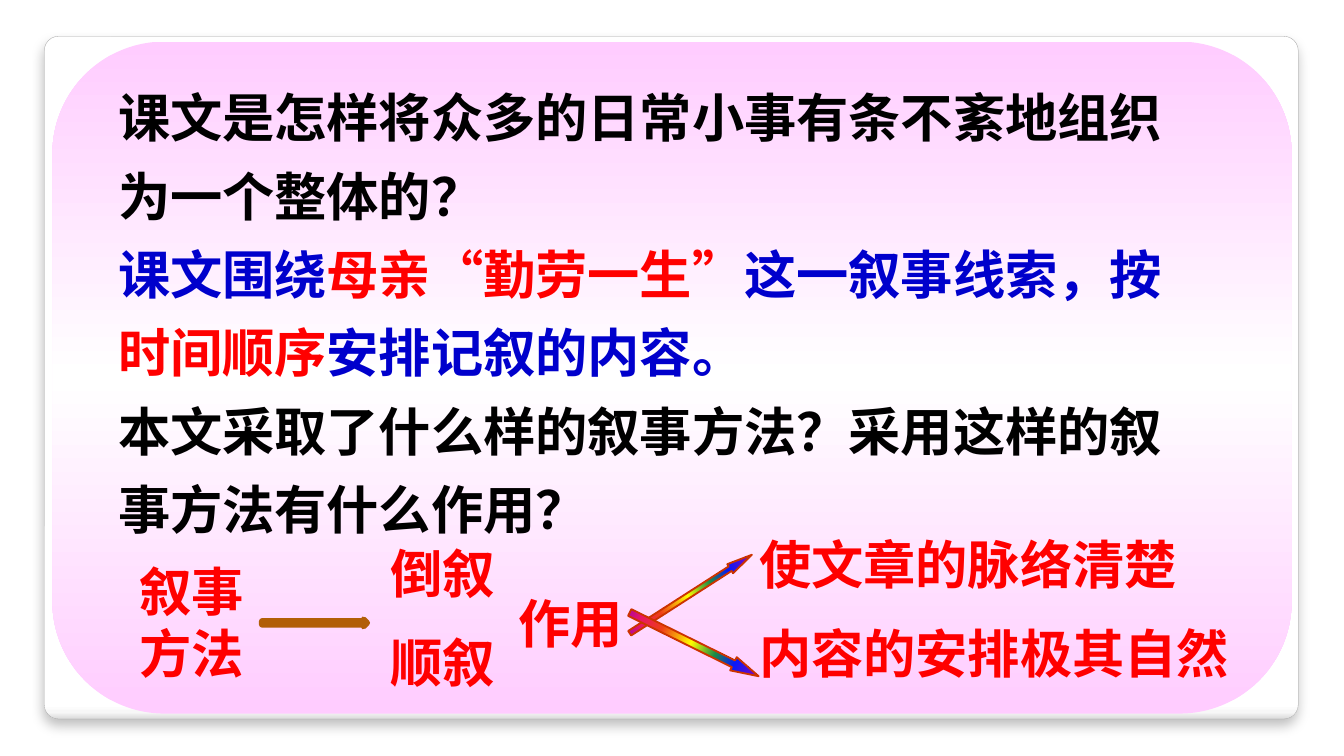
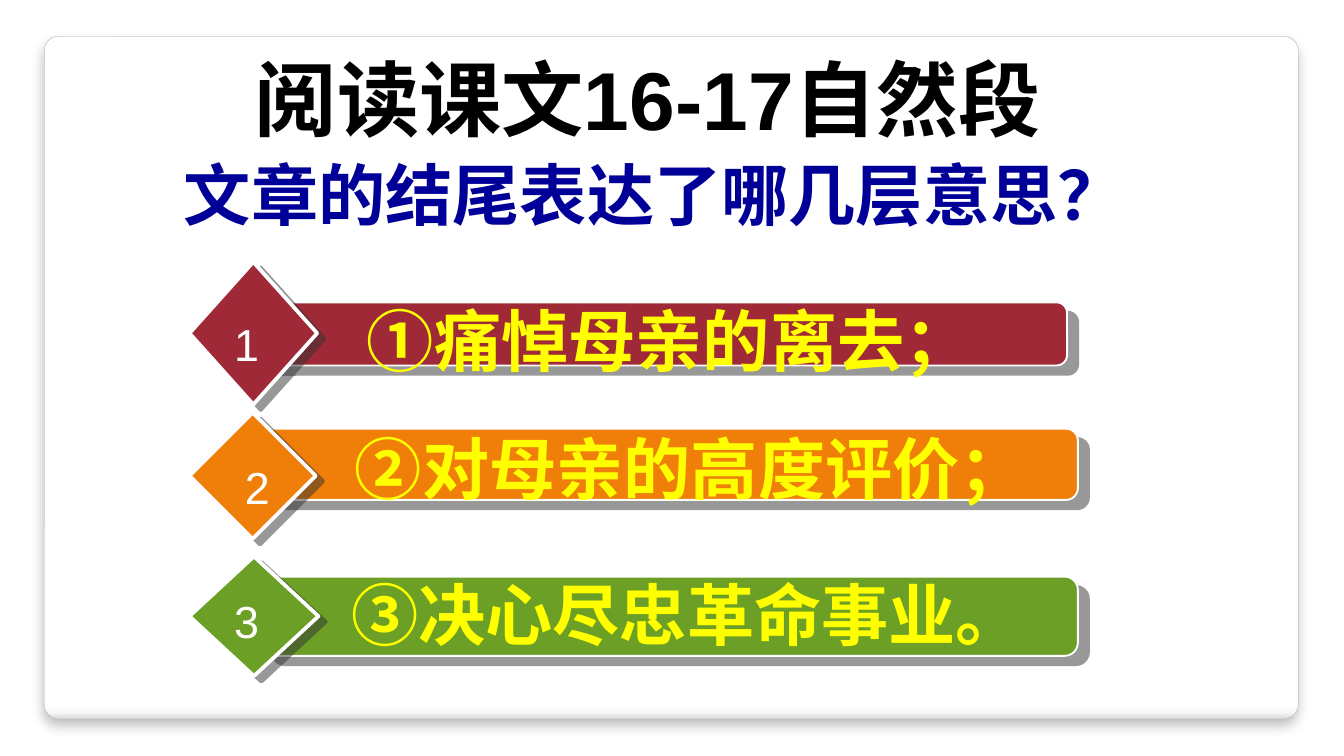
from lxml.etree import SubElement
from pptx import Presentation
from pptx.dml.color import RGBColor
from pptx.enum.shapes import MSO_SHAPE
from pptx.enum.text import MSO_AUTO_SIZE, PP_ALIGN
from pptx.oxml.ns import qn
from pptx.util import Inches, Pt

SLIDE_W, SLIDE_H = Inches(10), Inches(5.625)
COL, ROW = SLIDE_W / 100, SLIDE_H / 56.25

CJK, LATIN = "Noto Sans CJK SC", "Arial"

BLACK = RGBColor(0x00, 0x00, 0x00)
WHITE = RGBColor(0xFF, 0xFF, 0xFF)
PINK = RGBColor(0xFF, 0xCC, 0xFF)
RED = RGBColor(0xFF, 0x00, 0x00)
BLUE = RGBColor(0x00, 0x00, 0xCC)
NAVY = RGBColor(0x00, 0x00, 0x99)
YELLOW = RGBColor(0xFF, 0xFF, 0x00)
CRIMSON = RGBColor(0x9F, 0x29, 0x36)
ORANGE = RGBColor(0xF0, 0x7F, 0x09)
BROWN = RGBColor(0xB2, 0x5E, 0x07)
GREEN = RGBColor(0x6B, 0x9F, 0x25)
RUST = RGBColor(0xCC, 0x33, 0x00)
EDGE = RGBColor(0xA4, 0xA4, 0xA4)
SMOKE = RGBColor(0x33, 0x33, 0x33)
SILVER = RGBColor(0xC0, 0xC0, 0xC0)
MIST = RGBColor(0xF7, 0xF7, 0xF7)
FOG = RGBColor(0xDA, 0xDA, 0xDA)
PURPLE = RGBColor(0xA6, 0x03, 0xAB)
MAGENTA = RGBColor(0xE8, 0x17, 0x66)
FLAME = RGBColor(0xEE, 0x3F, 0x17)
EMERALD = RGBColor(0x1A, 0x8D, 0x48)
COBALT = RGBColor(0x08, 0x19, 0xFB)

PANEL_STOPS = [(0, WHITE), (98, WHITE), (99, MIST), (100, FOG)]
PINK_STOPS = [(0, PINK), (50, WHITE), (100, PINK)]
RAINBOW_STOPS = [(0, PURPLE), (12, MAGENTA), (27, FLAME), (48, YELLOW),
                 (65, EMERALD), (79, COBALT), (100, PURPLE)]

PANEL_SHADOW = (BLACK, 25, 6, 4, 90)
BAR_SHADOW = (SMOKE, 50, 0, 7.8, 40)
DIAMOND_SHADOW = (SMOKE, 50, 0, 5, 37)
TEXT_SHADOW = (SILVER, 100, 0, 2.8, 45)


def grid(x, y, w, h):
    return [round(v) for v in (x * COL, y * ROW, w * COL, h * ROW)]


def add_color(parent, color, alpha=100):
    clr = SubElement(parent, qn("a:srgbClr"), val=str(color))
    if alpha < 100:
        SubElement(clr, qn("a:alpha"), val=str(alpha * 1000))


def add_shadow(effects, color, alpha, blur, dist, angle):
    shadow = SubElement(effects, qn("a:outerShdw"), blurRad=str(Pt(blur)),
                        dist=str(Pt(dist)), dir=str(angle * 60000),
                        algn="ctr", rotWithShape="0")
    add_color(shadow, color, alpha)


def fill_gradient(shape, stops, angle):
    shape.fill.gradient()
    grad = shape.element.spPr.find(qn("a:gradFill"))
    gs_list = grad.find(qn("a:gsLst"))
    for gs in list(gs_list):
        gs_list.remove(gs)
    for pos, color in stops:
        add_color(SubElement(gs_list, qn("a:gs"), pos=str(pos * 1000)), color)
    grad.find(qn("a:lin")).set("ang", str(angle * 60000))


def add_box(shapes, kind, at, fill, line=None, adj=(), shadow=None,
            angle=90, rotation=0):
    sp = shapes.add_shape(kind, *grid(*at))
    for i, value in enumerate(adj):
        sp.adjustments[i] = value
    if isinstance(fill, list):
        fill_gradient(sp, fill, angle)
    else:
        sp.fill.solid()
        sp.fill.fore_color.rgb = fill
    if line:
        sp.line.color.rgb, sp.line.width = line[0], Pt(line[1])
    else:
        sp.line.fill.background()
    sp.shadow.inherit = False
    if shadow:
        add_shadow(sp.element.spPr.find(qn("a:effectLst")), *shadow)
    sp.rotation = rotation
    return sp


def format_run(r, size, color, font=CJK, bold=True, shadow=None):
    r.font.size, r.font.bold, r.font.name = Pt(size), bold, font
    r.font.color.rgb = color
    rPr = r.font._element
    SubElement(rPr, qn("a:ea"), typeface=CJK)
    if shadow:
        effects = SubElement(rPr, qn("a:effectLst"))
        add_shadow(effects, *shadow)
        rPr.find(qn("a:solidFill")).addnext(effects)


def add_text(shapes, at, lines, size, color, font=CJK, bold=True,
             align=None, wrap=True, shadow=None, leading=None, before=0):
    tf = shapes.add_textbox(*grid(*at)).text_frame
    tf.word_wrap = wrap
    tf.auto_size = MSO_AUTO_SIZE.SHAPE_TO_FIT_TEXT
    for i, line in enumerate(lines):
        p = tf.add_paragraph() if i else tf.paragraphs[0]
        p.alignment, p.line_spacing = align, leading
        if before:
            spacing = SubElement(p._p.get_or_add_pPr(), qn("a:spcBef"))
            SubElement(spacing, qn("a:spcPct"), val=str(before * 1000))
        for text, tint in [(line, color)] if isinstance(line, str) else line:
            r = p.add_run()
            r.text = text
            format_run(r, size, tint, font, bold, shadow)
    return tf


def add_slide(prs):
    s = prs.slides.add_slide(prs.slide_layouts[6])
    add_box(s.shapes, MSO_SHAPE.ROUNDED_RECTANGLE, (3.3, 2.7, 93.3, 50.8),
            PANEL_STOPS, (EDGE, 0.16), [0.021], PANEL_SHADOW)
    return s


def add_term(s, at, lines, before=50):
    add_text(s.shapes, at, lines, 28, RED, shadow=TEXT_SHADOW, before=before)


def add_answer(s, number, color, bar, diamond, label, label_at, number_at,
               font=LATIN, hang=False, wrap=False):
    shapes = s.shapes.add_group_shape().shapes
    add_box(shapes, MSO_SHAPE.ROUNDED_RECTANGLE, bar, color, (WHITE, 1),
            [0.167], BAR_SHADOW)
    add_box(shapes, MSO_SHAPE.DIAMOND, diamond, color, (WHITE, 2),
            shadow=DIAMOND_SHADOW)
    tf = add_text(shapes, label_at, [label], 36, YELLOW, font,
                  align=PP_ALIGN.CENTER)
    if hang:
        p = tf.paragraphs[0]
        p.level = 1
        pPr = p._p.get_or_add_pPr()
        pPr.set("marL", str(Inches(0.88)))
        pPr.set("indent", str(Inches(-0.38)))
    add_text(shapes, number_at, [str(number)], 24, WHITE, LATIN, False,
             PP_ALIGN.CENTER, wrap)


def build_structure(prs):
    s = add_slide(prs)
    add_box(s.shapes, MSO_SHAPE.FLOWCHART_ALTERNATE_PROCESS,
            (3.9, 3.1, 92.2, 50), PINK_STOPS)
    add_text(s.shapes, (7.8, 4.7, 81.8, 36.4), [
        "课文是怎样将众多的日常小事有条不紊地组织为一个整体的？",
        [("课文围绕", BLUE), ("母亲“勤劳一生”", RED),
         ("这一叙事线索，按", BLUE), ("时间顺序", RED),
         ("安排记叙的内容。", BLUE)],
        "本文采取了什么样的叙事方法？采用这样的叙事方法有什么作用？",
    ], 28, BLACK, leading=1.25)
    add_term(s, (9.4, 41.1, 10.8, 10.4), ["叙事", "方法"], before=0)
    add_term(s, (28.1, 39.8, 12.7, 12.8), ["倒叙", "顺叙"])
    add_term(s, (37.6, 43.5, 10.1, 5.7), ["作用"])
    arrows = s.shapes.add_group_shape().shapes
    for at, head, rotation in [((46, 43.8, 10.8, 0.8), 2.39, 327.3),
                               ((46.3, 47.4, 10.7, 1.1), 1.9, 26.3)]:
        add_box(arrows, MSO_SHAPE.RIGHT_ARROW, at, RAINBOW_STOPS, (RUST, 1),
                [0.5, head], angle=0, rotation=rotation)
    add_term(s, (55.5, 39.1, 37.5, 12.8),
             ["使文章的脉络清楚", "内容的安排极其自然"])
    add_box(s.shapes, MSO_SHAPE.RIGHT_ARROW, (19.5, 46.1, 7.8, 0.5),
            ORANGE, (BROWN, 3.35))


def build_ending(prs):
    s = add_slide(prs)
    add_text(s.shapes, (8.8, 3.1, 78.8, 8.4), ["阅读课文16-17自然段"],
             44, BLACK, LATIN, align=PP_ALIGN.CENTER)
    add_text(s.shapes, (12.7, 10.9, 74, 7.1),
             ["文章的结尾表达了哪几层意思？"], 36, NAVY)
    add_answer(s, 1, CRIMSON, (19.3, 22.5, 60.1, 4.7),
               (14.1, 19.5, 9.5, 10.6), "①痛悼母亲的离去；",
               (22.5, 21.8, 54.6, 7.1), (16.4, 23.1, 3.9, 5.1))
    add_answer(s, 2, ORANGE, (18, 31.9, 62.2, 5.3),
               (14.1, 30.7, 9.4, 9.4), "②对母亲的高度评价；",
               (18.8, 31.3, 60.2, 7.1), (17.2, 33.7, 3.9, 5.1), hang=True)
    add_answer(s, 3, GREEN, (19.4, 42.9, 60.8, 5.9),
               (14.1, 41.4, 9.6, 8.9), "③决心尽忠革命事业。 ",
               (24.5, 42.2, 54.4, 7), (16.4, 43.7, 3.9, 5), CJK, wrap=True)


def main():
    prs = Presentation()
    prs.slide_width, prs.slide_height = SLIDE_W, SLIDE_H
    build_structure(prs)
    build_ending(prs)
    prs.save("out.pptx")


if __name__ == "__main__":
    main()
